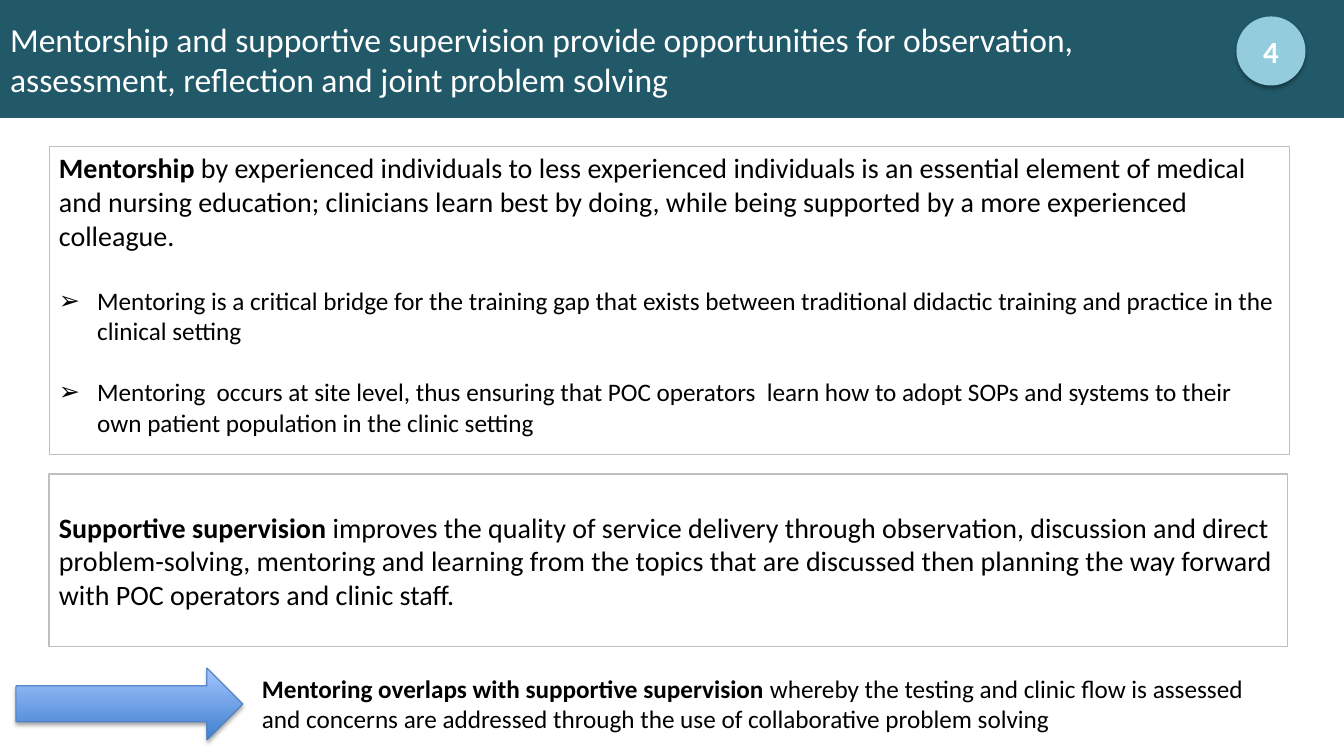
from lxml import etree
from pptx import Presentation
from pptx import util as u
from pptx.dml.color import RGBColor
from pptx.enum import shapes, text
from pptx.oxml import parse_xml
from pptx.oxml.ns import nsdecls, qn

PX = 9144000 / 1008  # EMU per px

THEME = {
    "font": "Calibri",
    "banner": "215968", "badge": "93CDDD", "frame": "BFBFBF",
    "ink": "000000", "paper": "FFFFFF",
    "arrow_low": "3F80CE", "arrow_high": "A4C4FF", "arrow_edge": "4B7EBC",
    "title": 24, "lead": 20, "body": 18, "number": 22,
}
SHADOW = (
    f'<a:effectLst {nsdecls("a")}><a:outerShdw blurRad="39370" dist="22860" dir="5400000" rotWithShape="0">'
    '<a:srgbClr val="000000"><a:alpha val="35000"/></a:srgbClr></a:outerShdw></a:effectLst>'
)


def add_box(page, left, top, width, height, kind=shapes.MSO_SHAPE.RECTANGLE,
            fill=None, line=None, weight=0.75, shadow=False):
    """Add a preset shape, measured in px."""
    box = page.shapes.add_shape(kind, *[round(n * PX) for n in (left, top, width, height)])
    box.shadow.inherit = False
    if shadow:
        effects = box._element.spPr.find(qn("a:effectLst"))
        effects.getparent().replace(effects, parse_xml(SHADOW))
    if fill:
        box.fill.solid()
        box.fill.fore_color.rgb = RGBColor.from_string(fill)
    else:
        box.fill.background()
    if line:
        box.line.color.rgb = RGBColor.from_string(line)
        box.line.width = u.Pt(weight)
    else:
        box.line.fill.background()
    return box


def write(box, words, bold="", size=18, color=THEME["ink"], align=text.PP_ALIGN.LEFT,
          anchor=text.MSO_ANCHOR.TOP, before=0, bullet=None, new=False):
    """Write one paragraph, with an optional bold opening."""
    frame = box.text_frame
    frame.word_wrap = True
    frame.auto_size = text.MSO_AUTO_SIZE.NONE
    frame.vertical_anchor = anchor
    para = frame.add_paragraph() if new else frame.paragraphs[0]
    para.alignment = align
    para.space_before = u.Pt(before)
    if bullet:
        props = para._p.get_or_add_pPr()
        props.set("marL", str(u.Inches(0.38)))
        props.set("indent", str(-u.Inches(0.38)))
        etree.SubElement(props, qn("a:buFont")).set("typeface", "Wingdings")
        etree.SubElement(props, qn("a:buFont")).getparent().remove(props[-1])
        props[-1].set("typeface", "Arial")
        etree.SubElement(props, qn("a:buChar")).set("char", bullet)
    for heavy, part in ((True, bold), (False, words)):
        for number, row in enumerate(part.split("\n") if part else []):
            if number:
                para.add_line_break()
            span = para.add_run()
            span.text = row
            span.font.name = THEME["font"]
            span.font.size = u.Pt(size)
            span.font.bold = heavy
            span.font.color.rgb = RGBColor.from_string(color)


deck = Presentation()
deck.slide_width, deck.slide_height = round(1344 * PX), round(756 * PX)
page = deck.slides.add_slide(deck.slide_layouts[5])

# Title banner
banner = page.shapes.title
banner.left, banner.top, banner.width, banner.height = 0, 0, deck.slide_width, round(118 * PX)
banner.fill.solid()
banner.fill.fore_color.rgb = RGBColor.from_string(THEME["banner"])
write(banner, "Mentorship and supportive supervision provide opportunities for observation, \n"
      "assessment, reflection and joint problem solving",
      size=THEME["title"], color=THEME["paper"], anchor=text.MSO_ANCHOR.MIDDLE)

# Mentorship panel
mentorship = add_box(page, 49, 146, 1240, 308, fill=THEME["paper"], line=THEME["frame"], weight=0.5)
write(mentorship, " by experienced individuals to less experienced individuals is an essential element "
      "of medical and nursing education; clinicians learn best by doing, while being supported by a "
      "more experienced colleague.", bold="Mentorship", size=THEME["lead"])
points = [
    (24, "Mentoring is a critical bridge for the training gap that exists between traditional "
         "didactic training and practice in the clinical setting"),
    (22, "Mentoring  occurs at site level, thus ensuring that POC operators  learn how to adopt "
         "SOPs and systems to their own patient population in the clinic setting"),
]
for gap, point in points:
    write(mentorship, point, size=THEME["body"], before=gap, bullet="➢", new=True)

# Supportive supervision panel
supervision = add_box(page, 49, 474, 1239, 173, line=THEME["frame"])
write(supervision, "improves the quality of service delivery through observation, discussion and direct "
      "problem-solving, mentoring and learning from the topics that are discussed then planning the "
      "way forward with POC operators and clinic staff.", bold="Supportive supervision ",
      size=THEME["lead"], anchor=text.MSO_ANCHOR.MIDDLE)

# Overlap statement and its arrow
overlap = add_box(page, 252, 668, 1037, 72, fill=THEME["paper"])
write(overlap, " whereby the testing and clinic flow is assessed and concerns are addressed through "
      "the use of collaborative problem solving",
      bold="Mentoring overlaps with supportive supervision", size=THEME["body"])
arrow = add_box(page, 16, 668, 227, 72, shapes.MSO_SHAPE.RIGHT_ARROW,
                line=THEME["arrow_edge"], shadow=True)
arrow.fill.gradient()
arrow.fill.gradient_angle = 90
for stop, shade in zip(arrow.fill.gradient_stops, ("arrow_low", "arrow_high")):
    stop.color.rgb = RGBColor.from_string(THEME[shade])

# Number badge
badge = add_box(page, 1237, 17, 68, 68, shapes.MSO_SHAPE.OVAL,
                fill=THEME["badge"], line=THEME["badge"], shadow=True)
write(badge, "", bold="4", size=THEME["number"], color=THEME["paper"],
      align=text.PP_ALIGN.CENTER, anchor=text.MSO_ANCHOR.MIDDLE)

deck.save("out.pptx")
